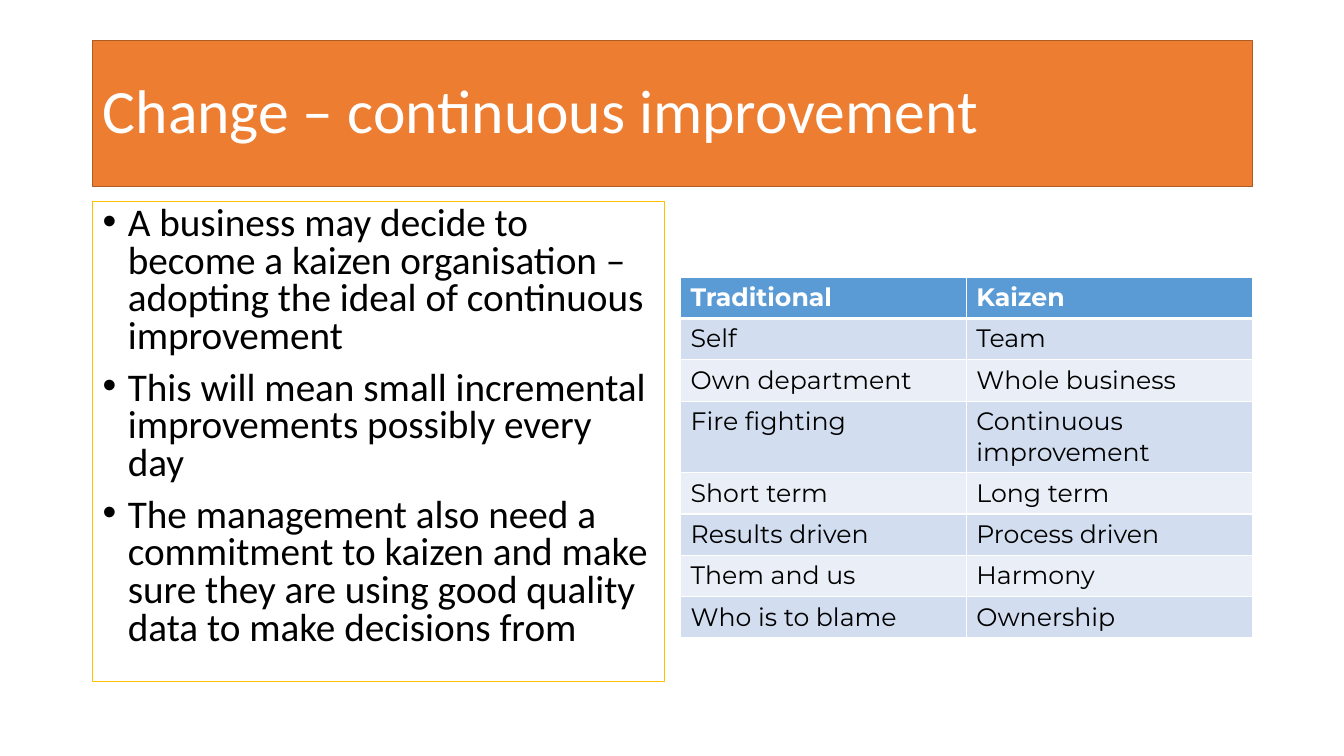
from lxml import etree
from pptx import Presentation
from pptx.dml.color import RGBColor
from pptx.enum.text import MSO_ANCHOR, MSO_AUTO_SIZE, PP_ALIGN
from pptx.oxml.ns import qn
from pptx.util import Inches, Pt

MIDDLE, TOP = MSO_ANCHOR.MIDDLE, MSO_ANCHOR.TOP
NO_FIT = MSO_AUTO_SIZE.NONE
LEFT = PP_ALIGN.LEFT

# Content
HEADING = "Change – continuous improvement"
POINTS = [
    "A business may decide to become a kaizen organisation – adopting the ideal "
    "of continuous improvement",
    "This will mean small incremental improvements possibly every day",
    "The management also need a commitment to kaizen and make sure they are using "
    "good quality data to make decisions from",
]
COMPARISON = [
    ("Traditional", "Kaizen"),
    ("Self", "Team"),
    ("Own department", "Whole business"),
    ("Fire fighting", "Continuous improvement"),
    ("Short term", "Long term"),
    ("Results driven", "Process driven"),
    ("Them and us", "Harmony"),
    ("Who is to blame", "Ownership"),
]

THEME = {
    "white": "FFFFFF", "black": "000000",
    "banner": "ED7D31", "banner_line": "AF5C24", "points_line": "FFC000",
    "header": "5B9BD5", "bands": ("D2DEEF", "EAEFF7"),
    "text_font": "Calibri", "table_font": "Montserrat",
    "heading_size": 44, "points_size": 28, "table_size": 18,
}

# Layout in inches
MARGIN, CONTENT_W, COLUMN_W = 0.92, 11.5, 5.67
TABLE_LEFT = MARGIN + CONTENT_W - COLUMN_W
ROW_H = 0.41
INDENT = 0.25


def rgb(name):
    return RGBColor.from_string(name)


def apply(target, formats):
    for attribute, value in formats.items():
        setattr(target, attribute, value)


def style_font(font, face, size, color, bold=False):
    apply(font, {"name": face, "size": Pt(size), "bold": bold})
    font.color.rgb = rgb(color)


def style_box(box, fill, line):
    box.fill.solid()
    box.fill.fore_color.rgb = rgb(fill)
    box.line.color.rgb = rgb(line)
    box.line.width = Pt(1)


def add_bullet(paragraph):
    props = paragraph._p.get_or_add_pPr()
    props.set("marL", str(Inches(INDENT)))
    props.set("indent", str(-Inches(INDENT)))
    etree.SubElement(props, qn("a:buFont")).set("typeface", "Arial")
    etree.SubElement(props, qn("a:buChar")).set("char", "•")


def add_borders(cell, widths):
    props = cell._tc.get_or_add_tcPr()
    for position, (side, width) in enumerate(widths.items()):
        border = etree.Element(qn(f"a:ln{side}"), w=str(Pt(width)))
        fill = etree.SubElement(border, qn("a:solidFill"))
        etree.SubElement(fill, qn("a:srgbClr")).set("val", THEME["white"])
        props.insert(position, border)


prs = Presentation()
prs.slide_width, prs.slide_height = Inches(13.33), Inches(7.5)
slide = prs.slides.add_slide(prs.slide_layouts[5])

# Heading banner
heading = slide.shapes.title
apply(heading, {"left": Inches(MARGIN), "top": Inches(0.4),
                "width": Inches(CONTENT_W), "height": Inches(1.45)})
style_box(heading, THEME["banner"], THEME["banner_line"])
heading.text_frame.text = HEADING
apply(heading.text_frame, {"vertical_anchor": MIDDLE, "word_wrap": True,
                           "auto_size": NO_FIT})
heading_line = heading.text_frame.paragraphs[0]
apply(heading_line, {"alignment": LEFT, "line_spacing": 0.9})
style_font(heading_line.runs[0].font, THEME["text_font"], THEME["heading_size"],
           THEME["white"])

# Bulleted points
points = slide.shapes.add_textbox(Inches(MARGIN), Inches(2),
                                  Inches(COLUMN_W), Inches(4.76))
style_box(points, THEME["white"], THEME["points_line"])
apply(points.text_frame, {"word_wrap": True, "auto_size": NO_FIT,
                          "vertical_anchor": TOP, "text": "\n".join(POINTS)})
for point in points.text_frame.paragraphs:
    apply(point, {"alignment": LEFT, "line_spacing": 0.8, "space_before": Pt(10)})
    add_bullet(point)
    style_font(point.runs[0].font, THEME["text_font"], THEME["points_size"],
               THEME["black"])

# Comparison table
comparison = slide.shapes.add_table(
    len(COMPARISON), len(COMPARISON[0]), Inches(TABLE_LEFT), Inches(2.75),
    Inches(COLUMN_W), Inches(ROW_H * len(COMPARISON))).table
for row, labels in enumerate(COMPARISON):
    is_header = row == 0
    band = THEME["header"] if is_header else THEME["bands"][(row - 1) % 2]
    for column, label in enumerate(labels):
        cell = comparison.cell(row, column)
        cell.text = label
        cell.fill.solid()
        cell.fill.fore_color.rgb = rgb(band)
        style_font(cell.text_frame.paragraphs[0].runs[0].font,
                   THEME["table_font"], THEME["table_size"],
                   THEME["white"] if is_header else THEME["black"], is_header)
        add_borders(cell, {"L": 1, "R": 1, "T": 3 if row == 1 else 1,
                           "B": 3 if is_header else 1})

prs.save("out.pptx")
